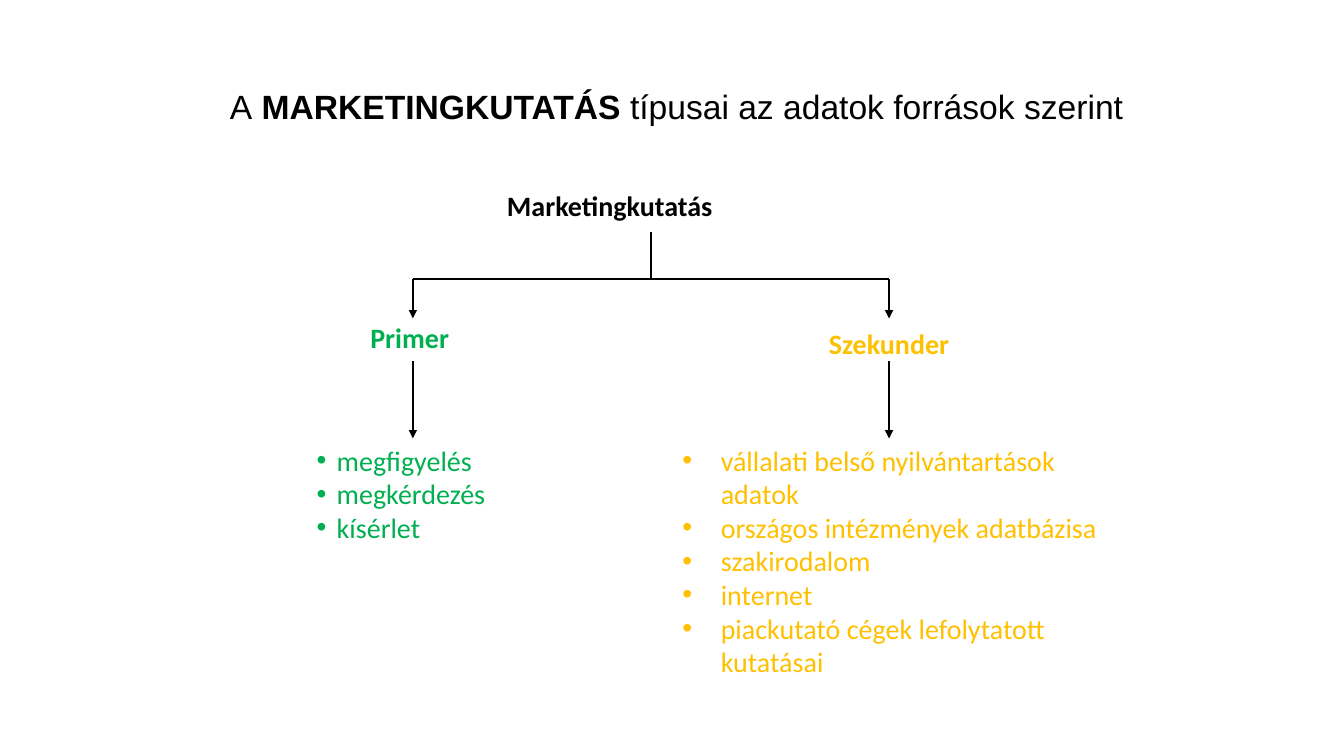
from pptx import Presentation
from pptx.dml.color import RGBColor
from pptx.enum.shapes import MSO_CONNECTOR
from pptx.enum.text import MSO_ANCHOR, MSO_AUTO_SIZE, PP_ALIGN
from pptx.oxml.ns import qn
from pptx.util import Inches, Pt
from lxml import etree

LINE = MSO_CONNECTOR.STRAIGHT
TOP = MSO_ANCHOR.TOP
FIXED = MSO_AUTO_SIZE.NONE
LEFT, MID = PP_ALIGN.LEFT, PP_ALIGN.CENTER
HUES = {"ink": "000000", "green": "00B050", "gold": "FFC000"}
WIDE, HIGH = Inches(13.33), Inches(7.5)
COL, ROW = WIDE / 100, HIGH / 100


def grid(*marks):
    """Turn alternating columns and rows into lengths."""
    return [int(mark * (ROW if i % 2 else COL)) for i, mark in enumerate(marks)]


def style(font, hue, size=20, face="Calibri", bold=False):
    """Set the look of a font."""
    font.name, font.size, font.bold = face, Pt(size), bold
    font.color.rgb = RGBColor.from_string(HUES[hue])


def place(shape, box):
    """Move a placeholder to a box on the grid."""
    shape.left, shape.top, shape.width, shape.height = grid(*box)
    frame = shape.text_frame
    frame.word_wrap, frame.auto_size = True, FIXED
    frame.vertical_anchor = TOP
    return frame


def title(shape, box):
    """Write the heading with its key word in bold."""
    para = place(shape, box).paragraphs[0]
    para.alignment, para.line_spacing = LEFT, 0.9
    parts = ["A", " MARKETINGKUTATÁS ", "típusai az adatok források szerint"]
    for i, part in enumerate(parts):
        run = para.add_run()
        run.text = part
        style(run.font, "ink", 24, "Arial", i == 1)


def label(slide, box, text, hue, align=MID):
    """Add a bold one-line caption."""
    frame = slide.shapes.add_textbox(*grid(*box)).text_frame
    frame.word_wrap = False
    frame.text = text
    para = frame.paragraphs[0]
    para.alignment = align
    style(para.runs[0].font, hue, bold=True)


def line(slide, ends, arrow=False):
    """Draw a thin line, with an arrowhead if asked."""
    link = slide.shapes.add_connector(LINE, *grid(*ends))
    link.line.width = Pt(1)
    link.line.color.rgb = RGBColor.from_string(HUES["ink"])
    if arrow:
        tail = etree.SubElement(link.line._get_or_add_ln(), qn("a:tailEnd"))
        tail.set("type", "triangle")
    etree.SubElement(link._element.spPr, qn("a:effectLst"))


def bullets(shape, box, items, hue, hang):
    """Fill a placeholder with a hanging bullet list."""
    frame = place(shape, box)
    frame.text = "\n".join(items)
    for para in frame.paragraphs:
        props = para._p.get_or_add_pPr()
        props.set("marL", str(Inches(hang)))
        props.set("indent", str(-Inches(hang)))
        font = etree.SubElement(props, qn("a:buFont"))
        font.set("typeface", "Arial")
        etree.SubElement(props, qn("a:buChar")).set("char", "•")
        para.space_before = Pt(0)
        style(para.runs[0].font, hue)


def root(slide, box, axis, mids):
    """Draw the top node, its trunk and the crossbar."""
    x, y, w, h = box
    base = y + 12.66
    label(slide, box, "Marketingkutatás", "ink", LEFT)
    line(slide, (axis, y + 6.4, axis, base))
    line(slide, (mids[0], base, mids[1], base))


def branch(slide, holder, box, mid, name, drop, items, hue, hang):
    """Draw one branch: arrow, name, arrow and list."""
    x, y, w, h = box
    line(slide, (mid, y, mid, y + 5.2), True)
    label(slide, (mid - 5.29, y + drop, 10.58, 5.87), name, hue)
    line(slide, (mid, y + 10.8, mid, y + 21.07), True)
    bullets(holder, (x, y + 21, w, h - 21), items, hue, hang)


def main():
    """Build and save the slide."""
    deck = Presentation()
    deck.slide_width, deck.slide_height = WIDE, HIGH
    slide = deck.slides.add_slide(deck.slide_layouts[3])
    head, first, second = list(slide.placeholders)[:3]
    mids = (30.72, 66.15)
    title(head, (16.35, 11.33, 72.08, 8))
    root(slide, (36.98, 24.27, 16.95, 5.87), 48.45, mids)
    branch(slide, first, (22.8, 36.93, 14.25, 44.73), mids[0], "Primer ", 4.8,
           ["megfigyelés", "megkérdezés", "kísérlet"], "green", 0.2)
    branch(slide, second, (50.03, 36.93, 33.23, 53.87), mids[1], "Szekunder", 5.6,
           ["vállalati belső nyilvántartások adatok",
            "országos intézmények adatbázisa", "szakirodalom", "internet",
            "piackutató cégek lefolytatott kutatásai"], "gold", 0.38)
    deck.save("out.pptx")


if __name__ == "__main__":
    main()
